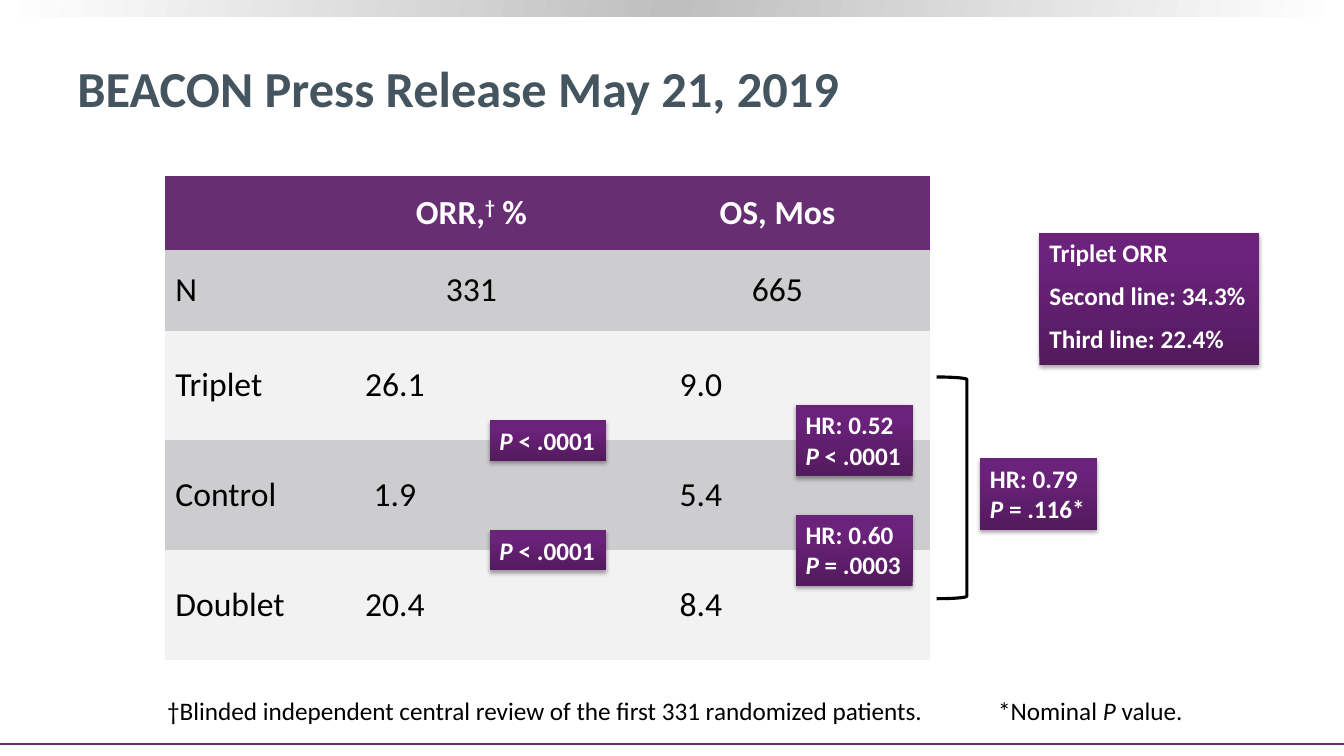
import pptx
import pptx.util
import pptx.dml.color
import pptx.enum.shapes
import pptx.enum.text
import pptx.oxml
import pptx.oxml.ns
from pptx.util import Inches, Pt

WIDTH, HEIGHT = 13.33, 7.5
COLORS = {"purple": "682E74", "title": "455560", "white": "FFFFFF", "black": "000000",
          "dark_band": "CDCDCF", "light_band": "F2F2F2"}
BADGE_STOPS = [(0, "531A5E"), (80, "6B227B"), (100, "6D217D")]
BAR_STOPS = [(0, "FFFFFF"), (50, "BFBFBF"), (100, "FFFFFF")]
NAMESPACE = pptx.oxml.ns.nsdecls("a")
RECTANGLE = pptx.enum.shapes.MSO_SHAPE.RECTANGLE
MIDDLE = pptx.enum.text.MSO_ANCHOR.MIDDLE
TABLE_BOX = (1.64, 1.75, 7.59, 4.8)
ROW_HEIGHTS = [0.73, 0.8, 1.09, 1.09, 1.09]
COLUMN_COUNT = 5
BADGE_WIDTH = 1.16


def rgb(name):
    return pptx.dml.color.RGBColor.from_string(COLORS[name])


def inches(box):
    return [Inches(length) for length in box]


def add_runs(paragraph, runs, size, color, bold=False):
    for text, style in runs:
        if style == "break":
            paragraph.add_line_break()
            continue
        run = paragraph.add_run()
        run.text = text
        run.font.name = "Calibri"
        run.font.size = Pt(size)
        run.font.bold = bold
        run.font.italic = style == "italic"
        run.font.color.rgb = rgb(color)
        if style == "super":
            run.font._element.set("baseline", "30000")


def write_paragraphs(frame, paragraphs, size, color, bold=False):
    for index, runs in enumerate(paragraphs):
        paragraph = frame.paragraphs[0] if index == 0 else frame.add_paragraph()
        paragraph.alignment = pptx.enum.text.PP_ALIGN.LEFT
        if index:
            paragraph.space_before = Pt(size / 2)
        add_runs(paragraph, runs, size, color, bold)


def fill_gradient(shape, stops, angle):
    shape.fill.gradient()
    shape.fill.gradient_angle = angle
    stop_list = shape._element.spPr.find(".//" + pptx.oxml.ns.qn("a:gsLst"))
    for stop in list(stop_list):
        stop_list.remove(stop)
    for position, color in stops:
        stop_list.append(pptx.oxml.parse_xml(
            f'<a:gs {NAMESPACE} pos="{position * 1000}"><a:srgbClr val="{color}"/></a:gs>'))


def add_frame(slide):
    top_bar = slide.shapes.add_shape(RECTANGLE, *inches((0, 0, WIDTH, 0.16)))
    fill_gradient(top_bar, BAR_STOPS, 170)
    top_bar.line.fill.background()
    top_bar.shadow.inherit = False
    rule = slide.shapes.add_connector(
        pptx.enum.shapes.MSO_CONNECTOR.STRAIGHT, *inches((0, 7.38, WIDTH, 7.38)))
    rule.line.color.rgb = rgb("purple")
    rule.line.width = Pt(1.5)
    rule._element.spPr.append(pptx.oxml.parse_xml(f"<a:effectLst {NAMESPACE}/>"))


def add_text(slide, box, runs, size, color, bold=False, wrap=False):
    frame = slide.shapes.add_textbox(*inches(box)).text_frame
    frame.word_wrap = wrap
    write_paragraphs(frame, [runs], size, color, bold)
    return frame


def add_badge(slide, box, paragraphs):
    badge = slide.shapes.add_shape(RECTANGLE, *inches(box))
    fill_gradient(badge, BADGE_STOPS, 90)
    badge.line.fill.background()
    badge.shadow.inherit = False
    effects = badge._element.spPr.find(pptx.oxml.ns.qn("a:effectLst"))
    effects.append(pptx.oxml.parse_xml(
        f'<a:outerShdw {NAMESPACE} blurRad="{Pt(3.1)}" dist="{Pt(1.8)}" dir="5400000" '
        'rotWithShape="0"><a:srgbClr val="000000"><a:alpha val="35000"/></a:srgbClr></a:outerShdw>'))
    frame = badge.text_frame
    frame.word_wrap = False
    frame.auto_size = pptx.enum.text.MSO_AUTO_SIZE.SHAPE_TO_FIT_TEXT
    frame.vertical_anchor = pptx.enum.text.MSO_ANCHOR.TOP
    write_paragraphs(frame, paragraphs, 18, "white", True)


def add_statistic(slide, left, center, p_value, hazard_ratio=None):
    runs = [("P", "italic"), (p_value, None)]
    height = 0.4
    if hazard_ratio:
        runs = [(f"HR: {hazard_ratio}", None), ("", "break")] + runs
        height = 0.71
    add_badge(slide, (left, center - height / 2, BADGE_WIDTH, height), [runs])


def add_results_table(slide, box):
    results = slide.shapes.add_table(len(ROW_HEIGHTS), COLUMN_COUNT, *inches(box)).table
    results.first_row = results.horz_banding = False
    results._tbl.tblPr.find(pptx.oxml.ns.qn("a:tableStyleId")).text = \
        "{2D5ABB26-0587-4C30-8999-92F81FD0307C}"
    for column in results.columns:
        column.width = Inches(box[2] / COLUMN_COUNT)
    contents = [
        ["", [("ORR,", None), ("†", "super"), (" %", None)], "OS, Mos"],
        ["N", "331", "665"],
        ["Triplet", "26.1", "9.0"],
        ["Control", "1.9", "5.4"],
        ["Doublet", "20.4", "8.4"],
    ]
    bands = ["purple", "dark_band", "light_band", "dark_band", "light_band"]
    for row, (height, values, band) in enumerate(zip(ROW_HEIGHTS, contents, bands)):
        results.rows[row].height = Inches(height)
        for column in range(COLUMN_COUNT):
            cell = results.cell(row, column)
            cell.fill.solid()
            cell.fill.fore_color.rgb = rgb(band)
            cell.vertical_anchor = MIDDLE
        for column, value in zip((0, 1, 3), values):
            cell = results.cell(row, column)
            if column and row < 2:
                cell.merge(results.cell(row, column + 1))
            if not value:
                continue
            paragraph = cell.text_frame.paragraphs[0]
            if column:
                paragraph.alignment = pptx.enum.text.PP_ALIGN.CENTER
            runs = [(value, None)] if isinstance(value, str) else value
            add_runs(paragraph, runs, 24, "white" if row == 0 else "black", row == 0)


def add_table_statistics(slide, box):
    left, top, width, _ = box
    orr_left, os_left = (left + width * column / COLUMN_COUNT + 0.18 for column in (2, 4))
    comparisons = [(3, " < .0001", "0.52", " < .0001"), (4, " < .0001", "0.60", " = .0003")]
    for row, orr_p, hazard_ratio, os_p in comparisons:
        boundary = top + sum(ROW_HEIGHTS[:row])
        add_statistic(slide, orr_left, boundary, orr_p)
        add_statistic(slide, os_left, boundary, os_p, hazard_ratio)


def add_triplet_doublet_comparison(slide, box):
    left, top, width, height = box
    bracket = slide.shapes.add_shape(
        pptx.enum.shapes.MSO_SHAPE.RIGHT_BRACKET, *inches(box))
    bracket.fill.background()
    bracket.line.color.rgb = rgb("black")
    bracket.line.width = Pt(2.25)
    bracket.shadow.inherit = False
    add_statistic(slide, left + width + 0.13, top + height / 2 + 0.06, " = .116*", "0.79")


def add_footnotes(slide, box):
    left, top, width, height = box
    add_text(slide, (left, top, 7.79, height),
             [("†Blinded independent central review of the first 331 randomized patients.", None)],
             18, "black")
    add_text(slide, (left + width - 2.05, top, 2.05, height),
             [("*Nominal ", None), ("P", "italic"), (" value.", None)], 18, "black")


def main():
    deck = pptx.Presentation()
    deck.slide_width, deck.slide_height = inches((WIDTH, HEIGHT))
    slide = deck.slides.add_slide(deck.slide_layouts[6])
    add_frame(slide)
    title = add_text(slide, (0.67, 0.26, 11.89, 1.21),
                     [("BEACON Press Release May 21, 2019", None)], 36, "title", True, True)
    title.vertical_anchor = MIDDLE
    add_results_table(slide, TABLE_BOX)
    add_table_statistics(slide, TABLE_BOX)
    add_triplet_doublet_comparison(slide, (9.29, 3.74, 0.3, 2.2))
    response_lines = ["Triplet ORR", "Second line: 34.3%", "Third line: 22.4%"]
    add_badge(slide, (10.31, 2.31, 2.18, 1.31), [[(line, None)] for line in response_lines])
    add_footnotes(slide, (1.56, 6.85, 10.29, 0.4))
    deck.save("out.pptx")


if __name__ == "__main__":
    main()
